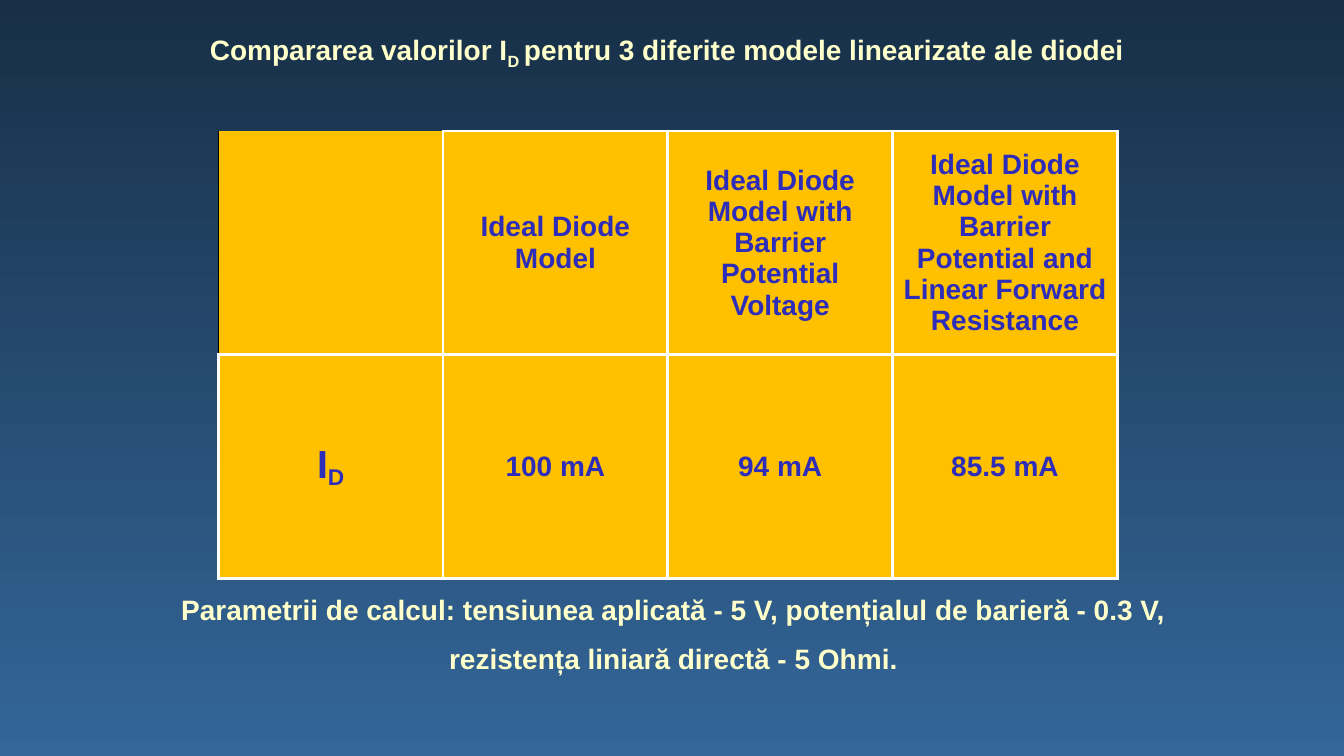
import dataclasses
import pptx
import pptx.dml.color
import pptx.enum.text
import pptx.oxml
import pptx.oxml.ns
import pptx.util

Cm = pptx.util.Cm
Pt = pptx.util.Pt
RGB = pptx.dml.color.RGBColor.from_string
MID = pptx.enum.text.MSO_ANCHOR.MIDDLE
TOP = pptx.enum.text.MSO_ANCHOR.TOP


@dataclasses.dataclass(frozen=True)
class Theme:
    face: str = "Arial"
    dark: str = "182F47"
    blue: str = "336699"
    cream: str = "FFFFCC"
    gold: str = "FFC000"
    ink: str = "2D2DB9"
    white: str = "FFFFFF"
    black: str = "000000"
    text: int = 20
    large: int = 28
    gap: int = 11
    rule: float = 2.25
    thin: float = 1


THEME = Theme()


def apply(item, form):
    for name, value in form.items():
        setattr(item, name, value)


def write(para, parts, color, size=THEME.text):
    para.alignment = pptx.enum.text.PP_ALIGN.CENTER
    for text, base in parts:
        run = para.add_run()
        run.text = text
        apply(run.font, {"name": THEME.face, "size": Pt(size), "bold": True})
        run.font.color.rgb = RGB(color)
        if base:
            run._r.get_or_add_rPr().set("baseline", str(base * 1000))


def frame(shape, anchor):
    apply(shape.text_frame, {
        "word_wrap": True,
        "auto_size": pptx.enum.text.MSO_AUTO_SIZE.NONE,
        "vertical_anchor": anchor,
    })
    return shape.text_frame


def back(slide):
    fill = slide.background.fill
    fill.gradient()
    fill.gradient_angle = 270
    for stop, color, place in zip(fill.gradient_stops, (THEME.dark, THEME.blue), (0, 1)):
        stop.color.rgb = RGB(color)
        stop.position = place


def title(slide, box):
    head = slide.shapes.title
    apply(head, dict(zip(("left", "top", "width", "height"), box)))
    parts = [
        ("Compararea valorilor I", 0),
        ("D ", -25),
        ("pentru 3 diferite modele linearizate ale diodei", 0),
    ]
    write(frame(head, MID).paragraphs[0], parts, THEME.cream)


def border(cell, sides):
    props = cell._tc.get_or_add_tcPr()
    space = pptx.oxml.ns.nsdecls("a")
    for index, (side, (color, width)) in enumerate(sides.items()):
        paint = f'<a:solidFill><a:srgbClr val="{color}"/></a:solidFill>' if color else "<a:noFill/>"
        line = f'<a:ln{side} {space} w="{int(Pt(width))}">{paint}</a:ln{side}>'
        props.insert(index, pptx.oxml.parse_xml(line))


def table(slide, box):
    rows = [
        ["", "Ideal Diode Model", "Ideal Diode Model with Barrier Potential Voltage",
         "Ideal Diode Model with Barrier Potential and Linear Forward Resistance"],
        ["I", "100 mA", "94 mA", "85.5 mA"],
    ]
    grid = slide.shapes.add_table(len(rows), len(rows[0]), *box).table
    apply(grid, {"first_row": False, "horz_banding": False})
    pad = dict.fromkeys(("margin_left", "margin_right", "margin_top", "margin_bottom"), Cm(0.13))
    for y, row in enumerate(rows):
        for x, text in enumerate(row):
            cell = grid.cell(y, x)
            apply(cell, {**pad, "vertical_anchor": MID})
            cell.fill.solid()
            cell.fill.fore_color.rgb = RGB(THEME.gold)
            sides = dict.fromkeys("LRTB", (THEME.white, THEME.rule))
            if not text:
                sides.update(L=(THEME.black, THEME.thin), T=(None, THEME.thin))
            border(cell, sides)
            para = cell.text_frame.paragraphs[0]
            if text == "I":
                write(para, [(text, 0), ("D", -16)], THEME.ink, THEME.large)
            elif text:
                write(para, [(text, 0)], THEME.ink)


def note(slide, box):
    body = frame(slide.shapes.add_textbox(*box), TOP)
    lines = [
        "Parametrii de calcul: tensiunea aplicată - 5 V, potențialul de barieră - 0.3 V,",
        "rezistența liniară directă - 5 Ohmi.",
    ]
    for index, line in enumerate(lines):
        para = body.add_paragraph() if index else body.paragraphs[0]
        if index:
            para.space_before = Pt(THEME.gap)
        write(para, [(line, 0)], THEME.cream)


def main():
    deck = pptx.Presentation()
    apply(deck, {"slide_width": Cm(33.87), "slide_height": Cm(19.05)})
    slide = deck.slides.add_slide(deck.slide_layouts[5])
    back(slide)
    title(slide, (Cm(4.95), Cm(0.74), Cm(23.72), Cm(1.12)))
    table(slide, (Cm(5.5), Cm(3.3), Cm(22.66), Cm(11.28)))
    note(slide, (Cm(0.86), Cm(14.8), Cm(32.23), Cm(2.4)))
    deck.save("out.pptx")


if __name__ == "__main__":
    main()
